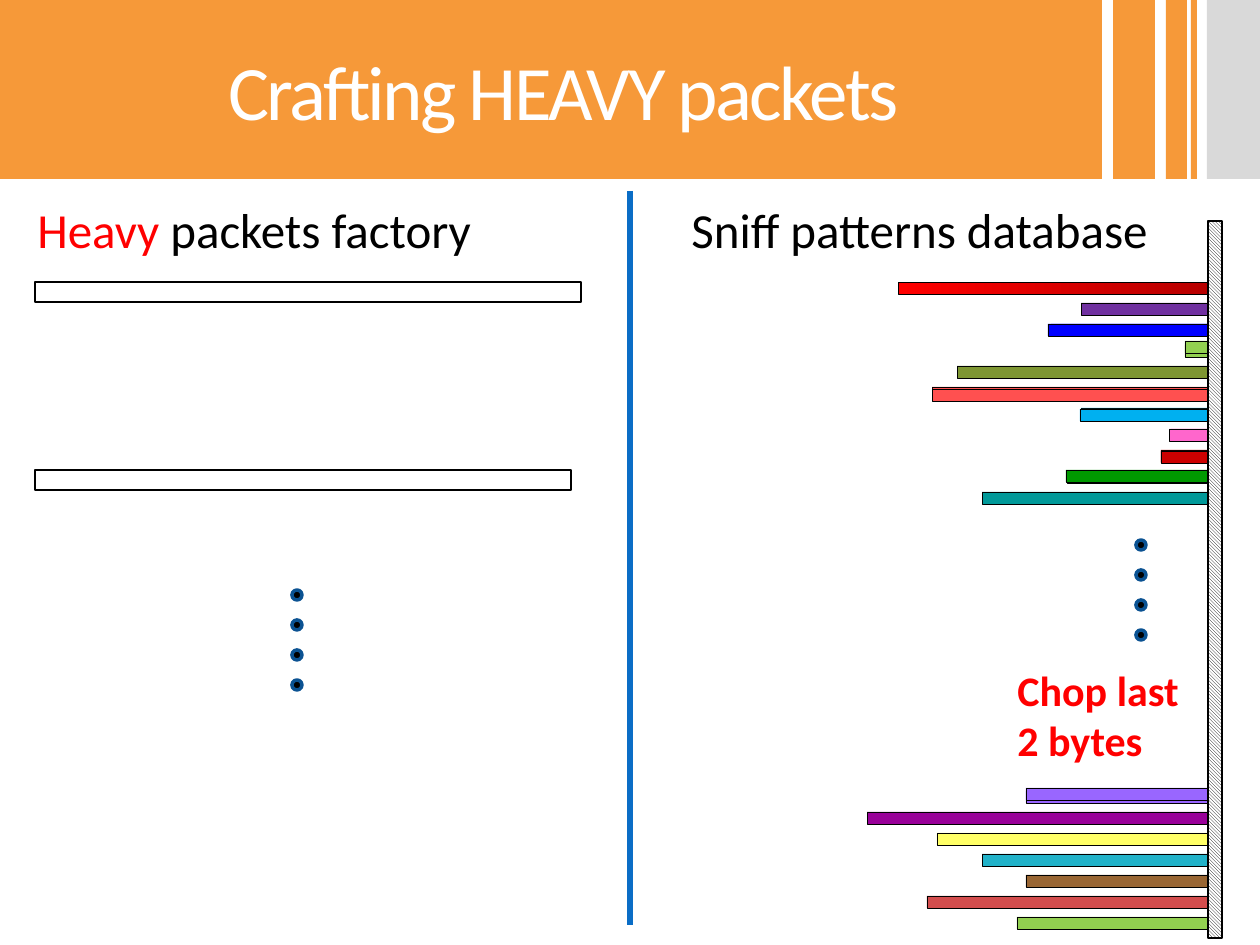
from dataclasses import dataclass

from lxml.etree import SubElement
from pptx import Presentation
from pptx.dml.color import RGBColor
from pptx.enum.dml import MSO_PATTERN
from pptx.enum.shapes import MSO_CONNECTOR, MSO_SHAPE
from pptx.enum.text import MSO_ANCHOR, MSO_AUTO_SIZE, PP_ALIGN
from pptx.oxml.ns import qn
from pptx.util import Emu, Pt


@dataclass(frozen=True)
class Theme:
    font: str = "Calibri"
    title_size: int = 44
    heading_size: int = 28
    note_size: int = 24
    orange: str = "F69939"
    grey: str = "D9D9D9"
    white: str = "FFFFFF"
    black: str = "000000"
    red: str = "FF0000"
    dark_red: str = "B60000"
    divider: str = "0A6DC6"
    dot_line: str = "0B5292"


THEME = Theme()
WALL_EDGE = 1215
BAR_HEIGHT = 12
ROW_STEP = 21
DOT_STEP = 30

# Each pattern: width, colour, and the shift of its second bar if it has one.
UPPER_PATTERNS = [
    (317, THEME.red, None),
    (134, "7030A0", None),
    (164, "0000FF", (-3, 0)),
    (30, "92D050", (0, -4)),
    (258, "7E9632", None),
    (283, "FF5050", (0, 2)),
    (134, "00B0F0", (-1, 1)),
    (44, "FF66CC", (-2, 0)),
    (54, "CC0000", (0, 1)),
    (148, "009900", (-1, -1)),
    (233, "009999", None),
]
LOWER_PATTERNS = [
    (189, "9966FF", (0, -3)),
    (348, "990099", None),
    (278, "FFFF66", None),
    (233, "21B2C9", None),
    (189, "996633", None),
    (288, "D34D4D", None),
    (198, "92D050", None),
]


def px(count):
    return Emu(round(count * 914400 / 126))


def rgb(value):
    return RGBColor.from_string(value)


def write_text(frame, lines, *, size, bold=False, align=None, spacing=None):
    """Write lines, each a list of (text, colour) runs."""
    for index, runs in enumerate(lines):
        paragraph = frame.paragraphs[0] if index == 0 else frame.add_paragraph()
        paragraph.alignment = align
        for text, color in runs:
            run = paragraph.add_run()
            run.text = text
            run.font.name = THEME.font
            run.font.size = Pt(size)
            run.font.bold = bold
            run.font.color.rgb = rgb(color)
            if spacing is not None:
                run.font._element.set("spc", str(round(spacing * 100)))


def add_label(shapes, box, lines, **text_format):
    frame = shapes.add_textbox(*map(px, box)).text_frame
    frame.word_wrap = False
    frame.auto_size = MSO_AUTO_SIZE.SHAPE_TO_FIT_TEXT
    write_text(frame, lines, **text_format)


def add_block(shapes, box, *, fill=None, line=None, width=0.25,
              kind=MSO_SHAPE.RECTANGLE):
    shape = shapes.add_shape(kind, *map(px, box))
    shape.shadow.inherit = False
    if fill:
        shape.fill.solid()
        shape.fill.fore_color.rgb = rgb(fill)
    else:
        shape.fill.background()
    if line:
        shape.line.color.rgb = rgb(line)
        shape.line.width = Pt(width)
    else:
        shape.line.fill.background()
    return shape


def add_header(slide):
    for left, width, color in [(1113, 42, THEME.orange), (1166, 21, THEME.orange),
                               (1191, 6, THEME.orange), (1207, 53, THEME.grey)]:
        add_block(slide.shapes, (left, 0, width, 179), fill=color)
    title = slide.shapes.title
    title.left, title.top, title.width, title.height = map(px, (0, 0, 1102, 179))
    title.fill.solid()
    title.fill.fore_color.rgb = rgb(THEME.orange)
    frame = title.text_frame
    frame.vertical_anchor = MSO_ANCHOR.MIDDLE
    frame.margin_left, frame.margin_right = px(38), px(13)
    frame.margin_top = frame.margin_bottom = px(6)
    write_text(frame, [[("Crafting HEAVY packets", THEME.white)]],
               size=THEME.title_size, align=PP_ALIGN.CENTER, spacing=-1.5)


def add_patterns(shapes, top, patterns):
    """Stack bars that all end at the wall, then lay the shifted bars on top."""
    bars, shifted = [], []
    for row, (width, color, shift) in enumerate(patterns):
        left, row_top = WALL_EDGE - width, top + row * ROW_STEP
        bars.append(((left, row_top, width, BAR_HEIGHT), color))
        if shift:
            box = (left + shift[0], row_top + shift[1], width, BAR_HEIGHT)
            shifted.append((box, color))
    return [add_block(shapes, box, fill=color, line=THEME.black)
            for box, color in bars + shifted]


def shade_bar(bar):
    bar.fill.gradient()
    bar.fill.gradient_angle = 0
    for stop, color in zip(bar.fill.gradient_stops, (THEME.red, THEME.dark_red)):
        stop.color.rgb = rgb(color)


def add_dots(shapes, left, top):
    for index in range(4):
        add_block(shapes, (left, top + index * DOT_STEP, 10, 10), fill=THEME.black,
                  line=THEME.dot_line, width=2, kind=MSO_SHAPE.OVAL)


def add_divider(shapes):
    divider = shapes.add_connector(MSO_CONNECTOR.STRAIGHT,
                                   px(630), px(191), px(630), px(925))
    divider.line.color.rgb = rgb(THEME.divider)
    divider.line.width = Pt(4)
    SubElement(divider._element.spPr, qn("a:effectLst"))


def add_wall(shapes):
    wall = add_block(shapes, (1208, 221, 14, 717), line=THEME.black, width=1.5)
    wall.fill.patterned()
    wall.fill.pattern = MSO_PATTERN.LIGHT_DOWNWARD_DIAGONAL
    wall.fill.fore_color.rgb = rgb(THEME.black)
    wall.fill.back_color.rgb = rgb(THEME.white)


def main():
    presentation = Presentation()
    presentation.slide_width, presentation.slide_height = px(1260), px(945)
    slide = presentation.slides.add_slide(presentation.slide_layouts[5])
    shapes = slide.shapes
    add_header(slide)

    add_label(shapes, (25, 193, 467, 72),
              [[("Heavy", THEME.red), (" packets factory", THEME.black)]],
              size=THEME.heading_size)
    for top, width in [(282, 546), (470, 536)]:
        add_block(shapes, (35, top, width, 20), line=THEME.black, width=1)
    add_dots(shapes.add_group_shape().shapes, 292, 590)

    add_label(shapes, (679, 193, 508, 72),
              [[("Sniff patterns database", THEME.black)]], size=THEME.heading_size)
    shade_bar(add_patterns(shapes, 282, UPPER_PATTERNS)[0])
    add_patterns(shapes, 791, LOWER_PATTERNS)
    add_dots(shapes, 1136, 540)
    add_divider(shapes)
    add_wall(shapes)
    add_label(shapes, (1005, 658, 198, 115),
              [[("Chop last", THEME.red)], [("2 bytes", THEME.red)]],
              size=THEME.note_size, bold=True)
    presentation.save("out.pptx")


if __name__ == "__main__":
    main()
